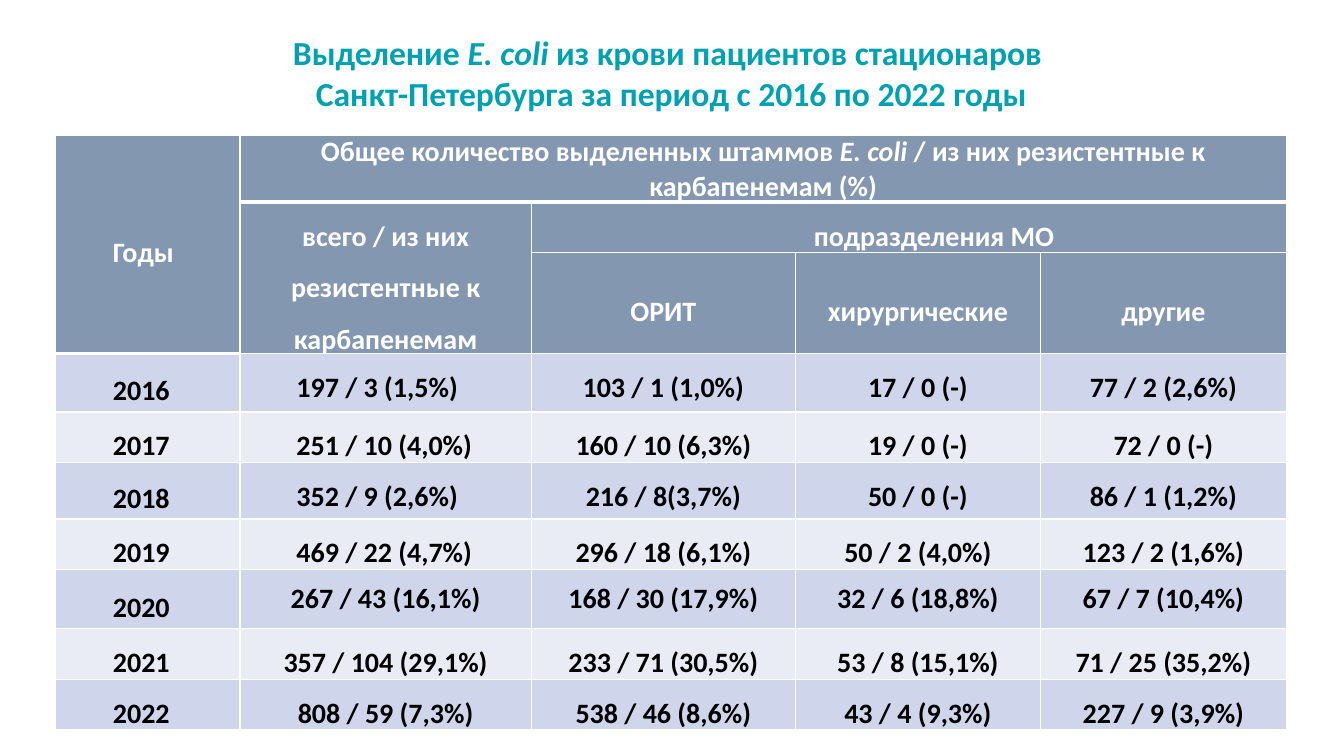
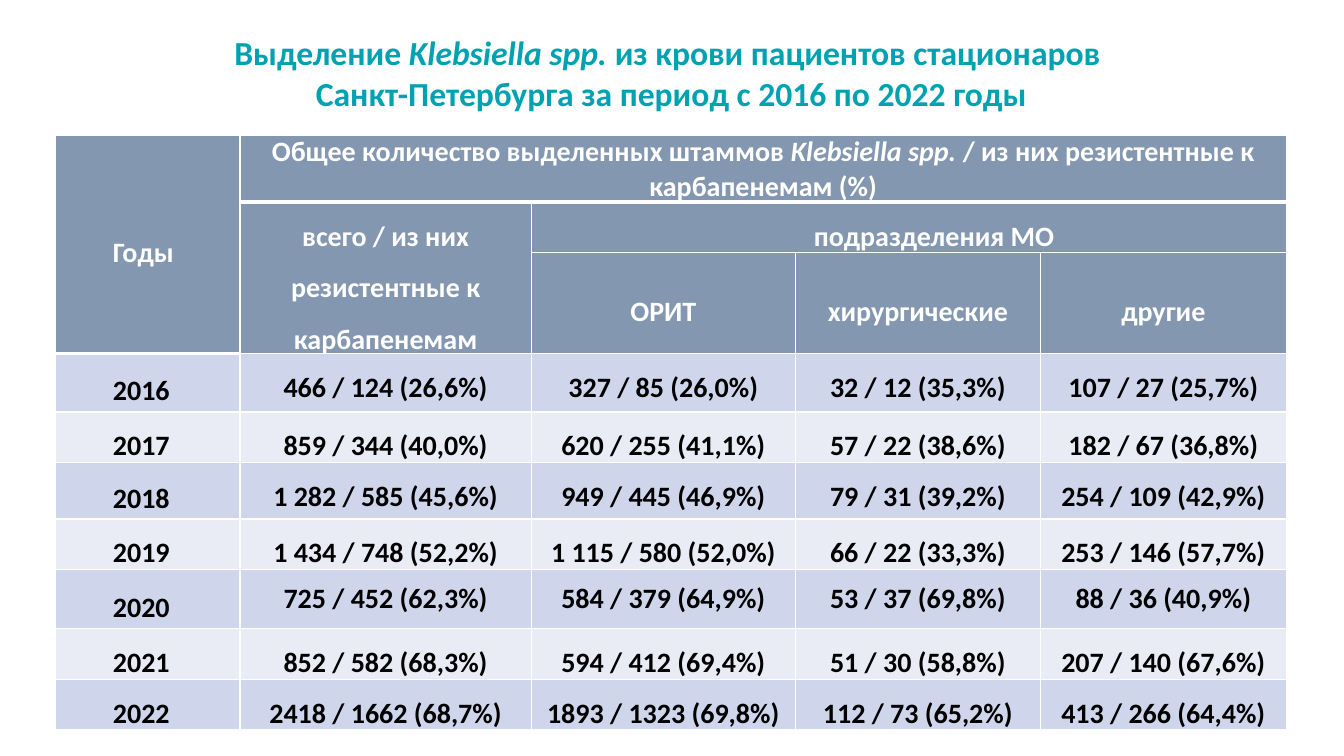
from dataclasses import dataclass

from lxml import etree
from pptx import Presentation
from pptx.dml.color import RGBColor
from pptx.enum.text import MSO_ANCHOR, MSO_AUTO_SIZE, PP_ALIGN
from pptx.oxml.ns import qn
from pptx.util import Inches, Pt

CENTER, LEFT = PP_ALIGN.CENTER, PP_ALIGN.LEFT
TOP, MIDDLE = MSO_ANCHOR.TOP, MSO_ANCHOR.MIDDLE
FIT_SHAPE = MSO_AUTO_SIZE.SHAPE_TO_FIT_TEXT


@dataclass(frozen=True)
class Theme:
    font: str = "Calibri"
    title: str = "00A2B1"
    header: str = "8497B0"
    bands: tuple = ("CFD5EA", "E9EBF5")
    light: str = "FFFFFF"
    dark: str = "000000"
    title_size: int = 24
    table_size: int = 20
    rule: int = 1
    heavy_rule: int = 3


THEME = Theme()
WIDTH, HEIGHT = Inches(13.33), Inches(7.5)

# Shares below are percentages of the slide's width and height.
TITLE_AREA = (12.4, 3.6, 75.1, 12.1)
TABLE_CORNER = (4.13, 17.87)
COLUMN_SHARES = (13.73, 21.68, 19.65, 18.23, 18.3)
ROW_SHARES = (8.53, 5.6, 7.73, 7.73, 6.53, 7.47, 6.53, 7.87, 6.67, 6.67)
HEADER_ROWS = 3
INDENT = 0.5
WIDE_LINES = 1.5

YEAR_ROWS = (
    ("2016", TOP, WIDE_LINES),
    ("2017", TOP, WIDE_LINES),
    ("2018", TOP, WIDE_LINES),
    ("2019", TOP, WIDE_LINES),
    ("2020", MIDDLE, 1.0),
    ("2021", MIDDLE, WIDE_LINES),
    ("2022", MIDDLE, WIDE_LINES),
)

E_COLI = (
    ("197 / 3 (1,5%)", "103 / 1 (1,0%)", "17 / 0 (-)", "77 / 2 (2,6%)"),
    ("251 / 10 (4,0%)", "160 / 10 (6,3%)", "19 / 0 (-)", "72 / 0 (-)"),
    ("352 / 9 (2,6%)", "216 / 8(3,7%)", "50 / 0 (-)", "86 / 1 (1,2%)"),
    ("469 / 22 (4,7%)", "296 / 18 (6,1%)", "50 / 2 (4,0%)", "123 / 2 (1,6%)"),
    ("267 / 43 (16,1%)", "168 / 30 (17,9%)", "32 / 6 (18,8%)", "67 / 7 (10,4%)"),
    ("357 / 104 (29,1%)", "233 / 71 (30,5%)", "53 / 8 (15,1%)", "71 / 25 (35,2%)"),
    ("808 / 59 (7,3%)", "538 / 46 (8,6%)", "43 / 4 (9,3%)", "227 / 9 (3,9%)"),
)

KLEBSIELLA = (
    ("466 / 124 (26,6%)", "327 / 85 (26,0%)", "32 / 12 (35,3%)", "107 / 27 (25,7%)"),
    ("859 / 344 (40,0%)", "620 / 255 (41,1%)", "57 / 22 (38,6%)", "182 / 67 (36,8%)"),
    ("1 282 / 585 (45,6%)", "949 / 445 (46,9%)", "79 / 31 (39,2%)", "254 / 109 (42,9%)"),
    ("1 434 / 748 (52,2%)", "1 115 / 580 (52,0%)", "66 / 22 (33,3%)", "253 / 146 (57,7%)"),
    ("725 / 452 (62,3%)", "584 / 379 (64,9%)", "53 / 37 (69,8%)", "88 / 36 (40,9%)"),
    ("852 / 582 (68,3%)", "594 / 412 (69,4%)", "51 / 30 (58,8%)", "207 / 140 (67,6%)"),
    ("2418 / 1662 (68,7%)", "1893 / 1323 (69,8%)", "112 / 73 (65,2%)", "413 / 266 (64,4%)"),
)


def across(share):
    return round(WIDTH * share / 100)


def down(share):
    return round(HEIGHT * share / 100)


def write(para, parts, size, color, align=CENTER, spacing=1.0, indent=0):
    para.alignment = align
    para.line_spacing = spacing
    if indent:
        para._p.get_or_add_pPr().set("marL", str(Inches(indent)))
    font = para.font
    font.name, font.size, font.bold = THEME.font, Pt(size), True
    font.color.rgb = RGBColor.from_string(color)
    for position, part in enumerate(parts):
        for line, text in enumerate(part.split("\n")):
            if line:
                para.add_line_break()
            span = para.add_run()
            span.text = text
            if position % 2:
                span.font.italic = True


def add_title(page, organism):
    left, top, width, height = TITLE_AREA
    box = page.shapes.add_textbox(across(left), down(top), across(width), down(height))
    frame = box.text_frame
    frame.word_wrap = True
    frame.auto_size = FIT_SHAPE
    parts = (
        "Выделение ",
        organism + " ",
        "из крови пациентов стационаров \nСанкт-Петербурга за период с 2016 по 2022 годы",
    )
    write(frame.paragraphs[0], parts, THEME.title_size, THEME.title)


def is_heavy_below(row, column):
    return row == 0 or (row == HEADER_ROWS - 1 and column == 0)


def style_cell(cell, row, column):
    in_header = row < HEADER_ROWS
    fill = THEME.header if in_header else THEME.bands[(row - HEADER_ROWS) % 2]
    properties = cell._tc.get_or_add_tcPr()
    heavy = {
        "a:lnT": row > 0 and is_heavy_below(row - 1, column),
        "a:lnB": is_heavy_below(row, column),
    }
    for edge in ("a:lnL", "a:lnR", "a:lnT", "a:lnB"):
        points = THEME.heavy_rule if heavy.get(edge) else THEME.rule
        line = etree.SubElement(properties, qn(edge), w=str(Pt(points)))
        solid = etree.SubElement(line, qn("a:solidFill"))
        etree.SubElement(solid, qn("a:srgbClr"), val=THEME.light)
    cell.fill.solid()
    cell.fill.fore_color.rgb = RGBColor.from_string(fill)


def fill_cell(cell, parts, color, anchor=MIDDLE, **layout):
    cell.vertical_anchor = anchor
    cell.margin_left = cell.margin_right = Inches(0.07 if anchor == MIDDLE else 0.06)
    cell.margin_top = cell.margin_bottom = 0
    write(cell.text_frame.paragraphs[0], parts, THEME.table_size, color, **layout)


def add_grid(page):
    shape = page.shapes.add_table(
        len(ROW_SHARES), len(COLUMN_SHARES),
        across(TABLE_CORNER[0]), down(TABLE_CORNER[1]),
        across(sum(COLUMN_SHARES)), down(sum(ROW_SHARES)),
    )
    table = shape.table
    table.first_row = table.horz_banding = False
    for column, share in zip(table.columns, COLUMN_SHARES):
        column.width = across(share)
    for row, share in zip(table.rows, ROW_SHARES):
        row.height = down(share)
    for row in range(len(ROW_SHARES)):
        for column in range(len(COLUMN_SHARES)):
            style_cell(table.cell(row, column), row, column)
    return table


def fill_header(table, organism):
    for first, last in (((0, 0), (2, 0)), ((0, 1), (0, 4)), ((1, 1), (2, 1)), ((1, 2), (1, 4))):
        table.cell(*first).merge(table.cell(*last))
    count_parts = (
        "Общее количество выделенных штаммов ",
        organism + " ",
        "/ из них резистентные к карбапенемам (%)",
    )
    fill_cell(table.cell(0, 0), ["Годы"], THEME.light,
              align=LEFT, spacing=WIDE_LINES, indent=INDENT)
    fill_cell(table.cell(0, 1), count_parts, THEME.light)
    fill_cell(table.cell(1, 2), ["подразделения МО"], THEME.light,
              spacing=WIDE_LINES, indent=INDENT)
    labels = (
        (1, 1, "всего / из них резистентные к карбапенемам"),
        (2, 2, "ОРИТ"),
        (2, 3, "хирургические"),
        (2, 4, "другие"),
    )
    for row, column, label in labels:
        fill_cell(table.cell(row, column), [label], THEME.light, spacing=WIDE_LINES)


def fill_years(table, counts, indent_totals):
    for row, ((year, anchor, spacing), values) in enumerate(zip(YEAR_ROWS, counts), HEADER_ROWS):
        fill_cell(table.cell(row, 0), [year], THEME.dark,
                  align=LEFT, spacing=WIDE_LINES, indent=INDENT)
        for column, value in enumerate(values, 1):
            indented = indent_totals and column == 1 and anchor == TOP
            fill_cell(table.cell(row, column), [value], THEME.dark, anchor,
                      align=LEFT if indented else CENTER,
                      spacing=spacing, indent=INDENT if indented else 0)


def add_page(deck, title_organism, organism, counts, indent_totals=False):
    page = deck.slides.add_slide(deck.slide_layouts[6])
    add_title(page, title_organism)
    table = add_grid(page)
    fill_header(table, organism)
    fill_years(table, counts, indent_totals)


def main():
    deck = Presentation()
    deck.slide_width, deck.slide_height = WIDTH, HEIGHT
    add_page(deck, "E. сoli", "E. coli", E_COLI, indent_totals=True)
    add_page(deck, "Klebsiella spp.", "Klebsiella spp.", KLEBSIELLA)
    deck.save("out.pptx")


if __name__ == "__main__":
    main()
